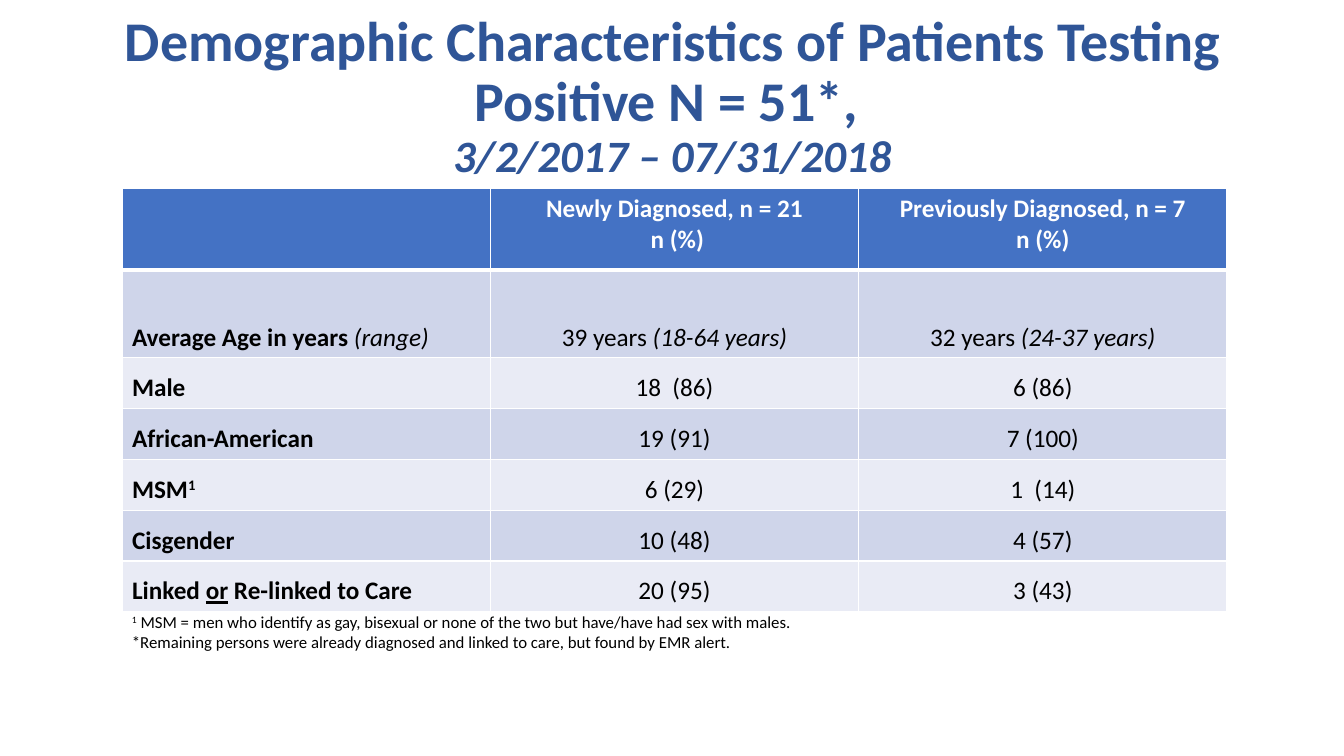
from lxml import etree
from pptx import Presentation
from pptx.dml.color import RGBColor
from pptx.enum import text as t
from pptx.oxml import ns
from pptx.util import Inches, Pt

COLORS = {"title": "2F5597", "header": "4472C4", "dark": "CFD5EA",
          "light": "E9EBF5", "white": "FFFFFF", "black": "000000"}
FONT = "Calibri"
CENTER = t.PP_ALIGN.CENTER

HEADINGS = ["", "Newly Diagnosed, n = 21\n n (%)", "Previously Diagnosed, n = 7\nn (%)"]
BOLD, ITALIC = {"bold": True}, {"italic": True}
ROWS = [
    ([("Average Age in years ", BOLD), ("(range)", ITALIC)],
     [("39 years ", {}), ("(18-64 years)", ITALIC)],
     [("32 years ", {}), ("(24-37 years)", ITALIC)]),
    ([("Male", BOLD)], [("18  (86)", {})], [("6 (86)", {})]),
    ([("African-American", BOLD)], [("19 (91)", {})], [("7 (100)", {})]),
    ([("MSM", BOLD), ("1", {"bold": True, "raised": True})],
     [("6 (29)", {})], [("1  (14)", {})]),
    ([("Cisgender", BOLD)], [("10 (48)", {})], [("4 (57)", {})]),
    ([("Linked ", BOLD), ("or", {"bold": True, "underline": True}),
      (" Re-linked to Care", BOLD)], [("20 (95)", {})], [("3 (43)", {})]),
]
HEADER_HEIGHT, AGE_HEIGHT = 0.81, 0.87
NOTES = [
    [("1", {"raised": True}),
     (" MSM = men who identify as gay, bisexual or none of the two"
      " but have/have had sex with males.", {})],
    [("*Remaining persons were already diagnosed and linked to care,"
      " but found by EMR alert.", {})],
]


def add_span(para, words, size=18, color="black", bold=False, italic=False,
             underline=False, raised=False):
    span = para.add_run()
    span.text = words
    font = span.font
    font.name, font.size = FONT, Pt(size)
    font.bold, font.italic, font.underline = bold, italic, underline
    font.color.rgb = RGBColor.from_string(COLORS[color])
    if raised:
        font._element.set("baseline", "30000")


def fill_paragraphs(frame, paragraphs, align=None, **style):
    """Write each list of (words, format) pairs as one paragraph."""
    for index, spans in enumerate(paragraphs):
        para = frame.add_paragraph() if index else frame.paragraphs[0]
        para.alignment = align
        for words, extra in spans:
            add_span(para, words, **{**style, **extra})


def add_text_box(page, left, top, width, height):
    frame = page.shapes.add_textbox(
        Inches(left), Inches(top), Inches(width), Inches(height)).text_frame
    frame.word_wrap = True
    return frame


def add_title(page, left, top, width, height):
    frame = add_text_box(page, left, top, width, height)
    frame.vertical_anchor = t.MSO_ANCHOR.MIDDLE
    para = frame.paragraphs[0]
    para.alignment, para.line_spacing = CENTER, 0.9
    style = {"color": "title", "bold": True}
    add_span(para, "Demographic Characteristics of Patients Testing Positive N = 51*, ",
             size=40, **style)
    para.add_line_break()
    add_span(para, "3/2/2017 – 07/31/2018", size=32, italic=True, **style)


def paint_cell(cell, fill, bottom=1):
    """Draw white borders, then fill the cell."""
    for side, width in (("L", 1), ("R", 1), ("T", 1), ("B", bottom)):
        line = etree.SubElement(cell._tc.get_or_add_tcPr(), ns.qn(f"a:ln{side}"),
                                w=str(Pt(width)))
        solid = etree.SubElement(line, ns.qn("a:solidFill"))
        etree.SubElement(solid, ns.qn("a:srgbClr"), val=COLORS["white"])
    cell.fill.solid()
    cell.fill.fore_color.rgb = RGBColor.from_string(COLORS[fill])


def add_patient_table(page, left, top, width, height):
    """Place the table; rows below the age row share the remaining height."""
    shared = len(ROWS) - 1
    rest = (height - HEADER_HEIGHT - AGE_HEIGHT) / shared
    table = page.shapes.add_table(
        len(ROWS) + 1, len(HEADINGS), Inches(left), Inches(top),
        Inches(width), Inches(height)).table
    for column in table.columns:
        column.width = Inches(width / len(HEADINGS))
    for row, row_height in zip(table.rows, [HEADER_HEIGHT, AGE_HEIGHT] + [rest] * shared):
        row.height = Inches(row_height)
    for column, heading in enumerate(HEADINGS):
        cell = table.cell(0, column)
        paint_cell(cell, "header", bottom=3)
        if heading:
            fill_paragraphs(cell.text_frame, [[(line, {})] for line in heading.split("\n")],
                            CENTER, color="white", bold=True)
    for row, entries in enumerate(ROWS, 1):
        for column, spans in enumerate(entries):
            cell = table.cell(row, column)
            paint_cell(cell, "dark" if row % 2 else "light")
            cell.vertical_anchor = t.MSO_ANCHOR.BOTTOM
            fill_paragraphs(cell.text_frame, [spans], CENTER if column else None)


def add_footnotes(page, left, top, width, height):
    fill_paragraphs(add_text_box(page, left, top, width, height), NOTES, size=12)


def main():
    deck = Presentation()
    deck.slide_width, deck.slide_height = Inches(13.33), Inches(7.5)
    page = deck.slides.add_slide(deck.slide_layouts[6])
    add_patient_table(page, 1.21, 1.87, 10.96, 4.2)
    add_footnotes(page, 1.21, 6.02, 10.16, 0.5)
    add_title(page, 0.67, 0.54, 12, 0.86)
    deck.save("out.pptx")


if __name__ == "__main__":
    main()
